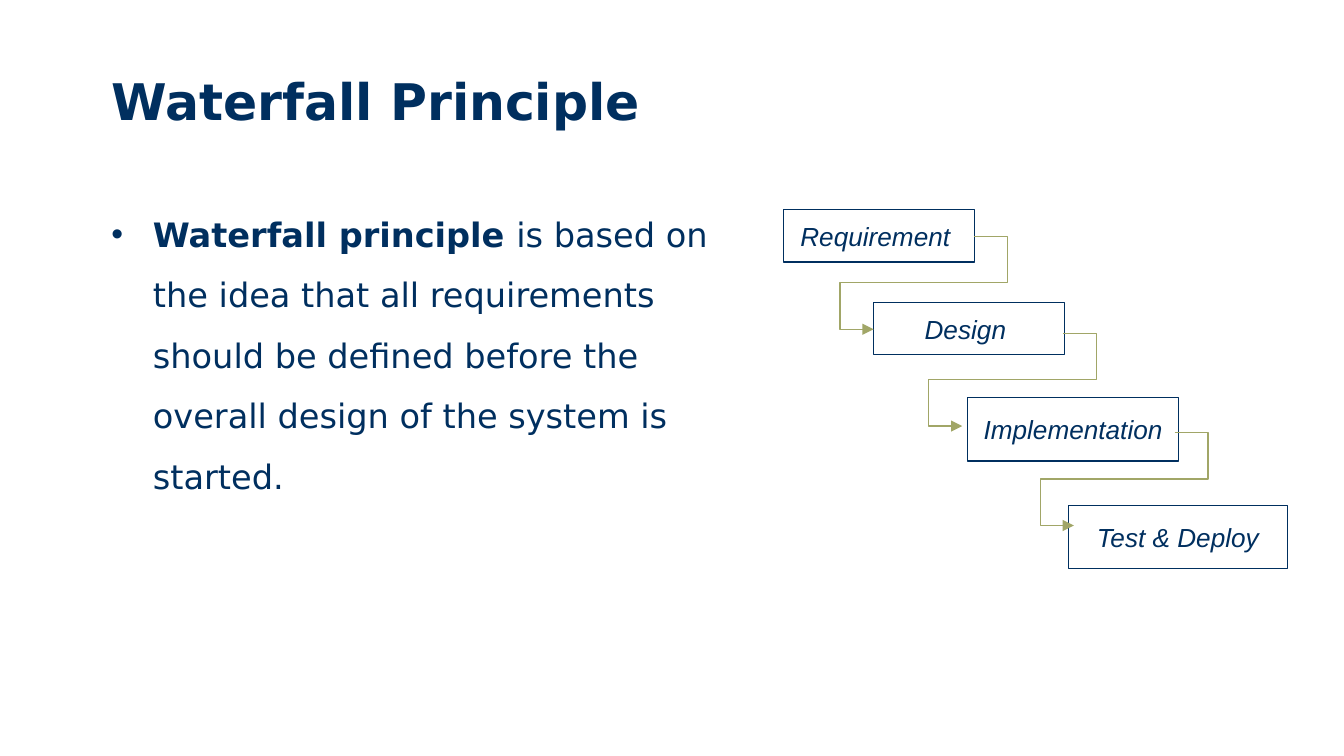
from lxml.etree import SubElement
from pptx import Presentation
from pptx.dml.color import RGBColor
from pptx.enum.shapes import MSO_CONNECTOR, MSO_SHAPE
from pptx.enum.text import MSO_ANCHOR, PP_ALIGN
from pptx.oxml.ns import qn
from pptx.util import Inches, Pt

NAVY = RGBColor(0x00, 0x2F, 0x5F)
OLIVE = RGBColor(0xA1, 0xA6, 0x67)
WHITE = RGBColor(0xFF, 0xFF, 0xFF)

# Stage boxes and arrow starts, relative to the diagram's corner
STAGES = [
    ("Requirement ", 0, 0, 1.42, 0.39),
    ("Design ", 0.67, 0.69, 1.42, 0.39),
    ("Implementation ", 1.37, 1.4, 1.57, 0.47),
    ("Test & Deploy", 2.12, 2.2, 1.63, 0.47),
]
ARROW_STARTS = [(1.42, 0.2), (2.08, 0.92), (2.91, 1.66)]
ARROW_WIDTH, ARROW_HEIGHT = 0.75, 0.69
ARROW_BENDS = {"adj1": -33200, "adj2": 49900, "adj3": 133200}


def write_text(shape, runs, size, font="DejaVu Sans", italic=False, align=PP_ALIGN.LEFT,
               anchor=MSO_ANCHOR.TOP, line_spacing=1.0, bullet_indent=None):
    """Fill a shape with one paragraph of (text, bold) runs."""
    frame = shape.text_frame
    frame.word_wrap = True
    frame.vertical_anchor = anchor
    paragraph = frame.paragraphs[0]
    paragraph.alignment = align
    paragraph.line_spacing = line_spacing
    if bullet_indent is not None:
        properties = paragraph._p.get_or_add_pPr()
        properties.set("marL", str(Inches(bullet_indent)))
        properties.set("indent", str(-Inches(bullet_indent)))
        SubElement(properties, qn("a:buFont"), typeface="Arial")
        SubElement(properties, qn("a:buChar"), char="•")
    for text, bold in runs:
        run = paragraph.add_run()
        run.text = text
        run.font.name = font
        run.font.size = Pt(size)
        run.font.bold = bold
        run.font.italic = italic
        run.font.color.rgb = NAVY


def add_title(slide, left, top, width, height):
    box = slide.shapes.add_textbox(Inches(left), Inches(top), Inches(width), Inches(height))
    write_text(box, [("Waterfall Principle", True)], size=27,
               anchor=MSO_ANCHOR.MIDDLE, line_spacing=0.9)


def add_body(slide, left, top, width, height):
    box = slide.shapes.add_textbox(Inches(left), Inches(top), Inches(width), Inches(height))
    runs = [
        ("Waterfall principle ", True),
        ("is based on the idea that all requirements should be defined before "
         "the overall design of the system is started.", False),
    ]
    write_text(box, runs, size=18, line_spacing=1.5, bullet_indent=0.31)


def add_stage(slide, text, left, top, width, height):
    shape = slide.shapes.add_shape(MSO_SHAPE.RECTANGLE, Inches(left), Inches(top),
                                   Inches(width), Inches(height))
    shape.shadow.inherit = False
    shape.fill.background()
    shape.line.color.rgb = NAVY
    shape.line.width = Pt(0.75)
    write_text(shape, [(text, False)], size=14, font="Arial", italic=True,
               align=PP_ALIGN.CENTER, anchor=MSO_ANCHOR.MIDDLE)


def add_step_arrow(slide, left, top):
    """Leave to the right, drop, and return to the left with an arrowhead."""
    connector = slide.shapes.add_connector(
        MSO_CONNECTOR.ELBOW, Inches(left), Inches(top),
        Inches(left - ARROW_WIDTH), Inches(top + ARROW_HEIGHT))
    connector.line.color.rgb = OLIVE
    connector.line.width = Pt(0.75)
    properties = connector._element.spPr
    # Five-part route
    geometry = properties.find(qn("a:prstGeom"))
    geometry.set("prst", "bentConnector5")
    adjustments = geometry.find(qn("a:avLst"))
    for name, value in ARROW_BENDS.items():
        SubElement(adjustments, qn("a:gd"), name=name, fmla=f"val {value}")
    # Arrowhead, no shadow
    SubElement(properties.find(qn("a:ln")), qn("a:tailEnd"), type="triangle")
    SubElement(properties, qn("a:effectLst"))


def add_waterfall(slide, left, top):
    for text, x, y, width, height in STAGES:
        add_stage(slide, text, left + x, top + y, width, height)
    for x, y in ARROW_STARTS:
        add_step_arrow(slide, left + x, top + y)


def main():
    presentation = Presentation()
    # 16:9 page
    presentation.slide_width = Inches(10)
    presentation.slide_height = Inches(10) * 9 // 16
    slide = presentation.slides.add_slide(presentation.slide_layouts[6])
    slide.background.fill.solid()
    slide.background.fill.fore_color.rgb = WHITE
    add_title(slide, 0.73, 0.45, 7.49, 0.65)
    add_body(slide, 0.73, 1.39, 4.94, 2.37)
    add_waterfall(slide, 5.83, 1.56)
    presentation.save("out.pptx")


if __name__ == "__main__":
    main()
